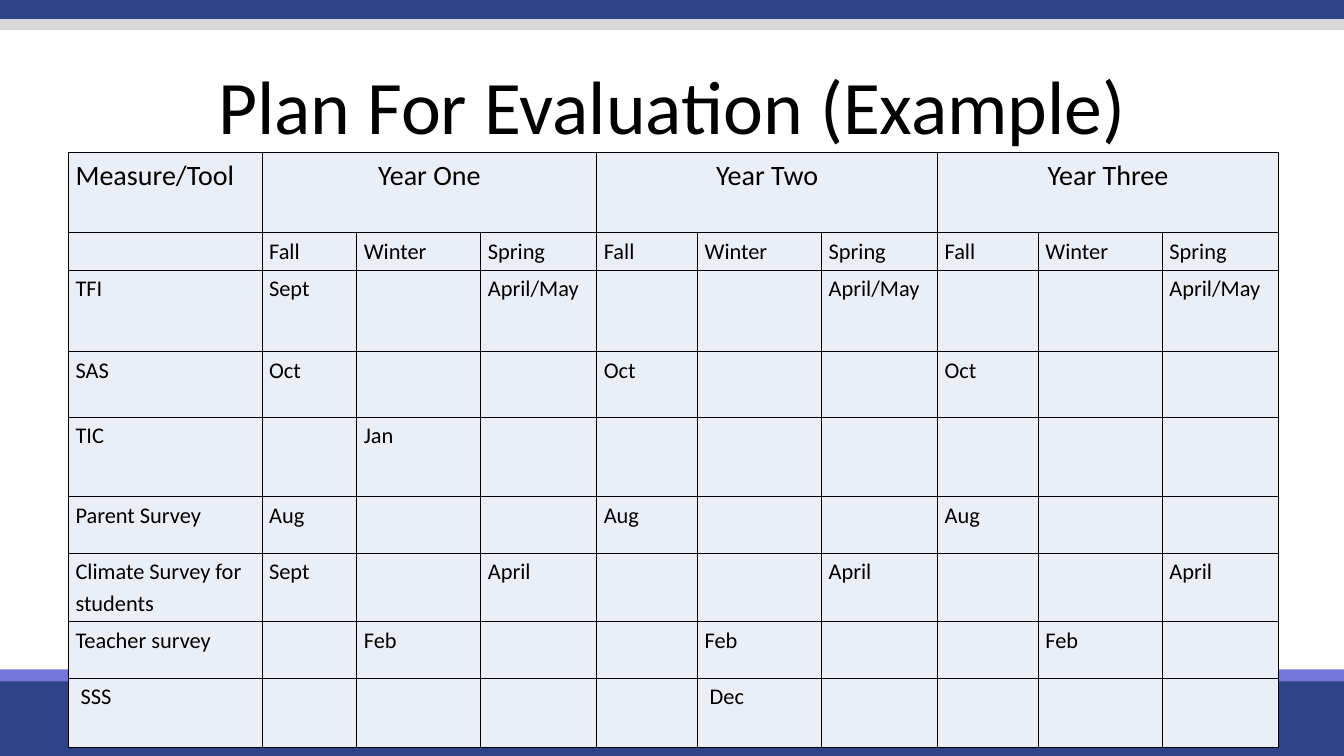
from typing import NamedTuple

from lxml import etree
from pptx import Presentation
from pptx import util as u
from pptx.dml.color import RGBColor
from pptx.enum import shapes, text
from pptx.oxml import ns

NAVY = RGBColor(0x2E, 0x44, 0x88)
VIOLET = RGBColor(0x74, 0x76, 0xDA)
GREY = RGBColor(0xD9, 0xD9, 0xD9)
PALE = RGBColor(0xEA, 0xEF, 0xF7)
BLACK = RGBColor(0, 0, 0)
FONT = "Calibri"
SLIDE_WIDTH = 13.33


class Band(NamedTuple):
    top: float
    height: float
    color: RGBColor


class Row(NamedTuple):
    height: float
    label: str
    dates: dict[int, str]  # table column -> text
    size: int = 16
    after: int = 0
    align: text.PP_ALIGN = text.PP_ALIGN.LEFT


BANDS = [
    Band(6.7, 0.8, NAVY),
    Band(6.64, 0.12, VIOLET),
    Band(0, 0.19, NAVY),
    Band(0.19, 0.11, GREY),
]
SEASONS = ["Fall", "Winter", "Spring"]
YEAR_STARTS = [1, 4, 7]
COLUMN_WIDTHS = [1.92, 0.94, 1.23, 1.15] + [1, 1.23, 1.15] * 2


def every_year(**dates: str) -> dict[int, str]:
    """Repeat the season dates in each of the three years."""
    return {start + SEASONS.index(season): date
            for start in YEAR_STARTS for season, date in dates.items()}


ROWS = [
    Row(0.8, "Measure/Tool", {1: "Year One", 4: "Year Two", 7: "Year Three"},
        20, 10, text.PP_ALIGN.CENTER),
    Row(0.37, "", every_year(Fall="Fall", Winter="Winter", Spring="Spring"), after=10),
    Row(0.81, "TFI", every_year(Spring="April/May") | {1: "Sept"}),
    Row(0.65, "SAS", every_year(Fall="Oct")),
    Row(0.79, "TIC", {2: "Jan"}),
    Row(0.56, "Parent Survey", every_year(Fall="Aug")),
    Row(0.68, "Climate Survey for students", every_year(Spring="April") | {1: "Sept"}),
    Row(0.56, "Teacher survey", every_year(Winter="Feb")),
    Row(0.69, " SSS", {5: " Dec"}, after=10),
]


def set_font(font, size: int) -> None:
    for name, value in {"name": FONT, "size": u.Pt(size)}.items():
        setattr(font, name, value)
    font.color.rgb = BLACK


def add_band(s, band: Band) -> None:
    sp = s.shapes.add_shape(shapes.MSO_SHAPE.RECTANGLE, 0, u.Inches(band.top),
                            u.Inches(SLIDE_WIDTH), u.Inches(band.height))
    sp.shadow.inherit = False
    sp.fill.solid()
    sp.fill.fore_color.rgb = band.color
    sp.line.fill.background()


def add_title(s, wording: str) -> None:
    sp = s.shapes.title
    box = {"left": 0, "top": 0.64, "width": SLIDE_WIDTH, "height": 0.75}
    for name, value in box.items():
        setattr(sp, name, u.Inches(value))
    tf = sp.text_frame
    tf.auto_size = text.MSO_AUTO_SIZE.NONE
    tf.vertical_anchor = text.MSO_ANCHOR.TOP
    p = tf.paragraphs[0]
    p.alignment = text.PP_ALIGN.CENTER
    p.line_spacing = 0.9
    r = p.add_run()
    r.text = wording
    set_font(r.font, 54)


def add_borders(cell) -> None:
    tc_pr = cell._tc.get_or_add_tcPr()
    for side in ("lnL", "lnR", "lnT", "lnB"):
        line = etree.SubElement(tc_pr, ns.qn(f"a:{side}"), w=str(u.Pt(1)))
        fill = etree.SubElement(line, ns.qn("a:solidFill"))
        etree.SubElement(fill, ns.qn("a:srgbClr"), val=str(BLACK))


def format_cell(cell, wording: str, row: Row, align: text.PP_ALIGN) -> None:
    margins = {"left": 0.07, "top": 0.01, "right": 0.07, "bottom": 0}
    for side, value in margins.items():
        setattr(cell, f"margin_{side}", u.Inches(value))
    add_borders(cell)
    cell.fill.solid()
    cell.fill.fore_color.rgb = PALE
    p = cell.text_frame.paragraphs[0]
    layout = {"alignment": align, "line_spacing": 1.15, "space_after": u.Pt(row.after)}
    for name, value in layout.items():
        setattr(p, name, value)
    set_font(p.font, row.size)
    if wording:
        r = p.add_run()
        r.text = wording
        set_font(r.font, row.size)


def add_schedule(s) -> None:
    frame = s.shapes.add_table(
        len(ROWS), len(COLUMN_WIDTHS), u.Inches(0.68), u.Inches(1.51),
        u.Inches(sum(COLUMN_WIDTHS)), u.Inches(sum(row.height for row in ROWS)))
    table = frame.table
    table.first_row = table.horz_banding = False
    for column, width in zip(table.columns, COLUMN_WIDTHS):
        column.width = u.Inches(width)
    for i, row in enumerate(ROWS):
        table.rows[i].height = u.Inches(row.height)
        for j in range(len(COLUMN_WIDTHS)):
            wording = row.dates.get(j, "") if j else row.label
            align = row.align if j else text.PP_ALIGN.LEFT
            format_cell(table.cell(i, j), wording, row, align)
    # Year headings span their three seasons
    for start in YEAR_STARTS:
        table.cell(0, start).merge(table.cell(0, start + len(SEASONS) - 1))


def main() -> None:
    prs = Presentation()
    prs.slide_width, prs.slide_height = u.Inches(SLIDE_WIDTH), u.Inches(7.5)
    s = prs.slides.add_slide(prs.slide_layouts[5])
    # Top and bottom bands
    for band in BANDS:
        add_band(s, band)
    # Title and evaluation schedule
    add_title(s, "Plan For Evaluation (Example)")
    add_schedule(s)
    prs.save("out.pptx")


if __name__ == "__main__":
    main()
